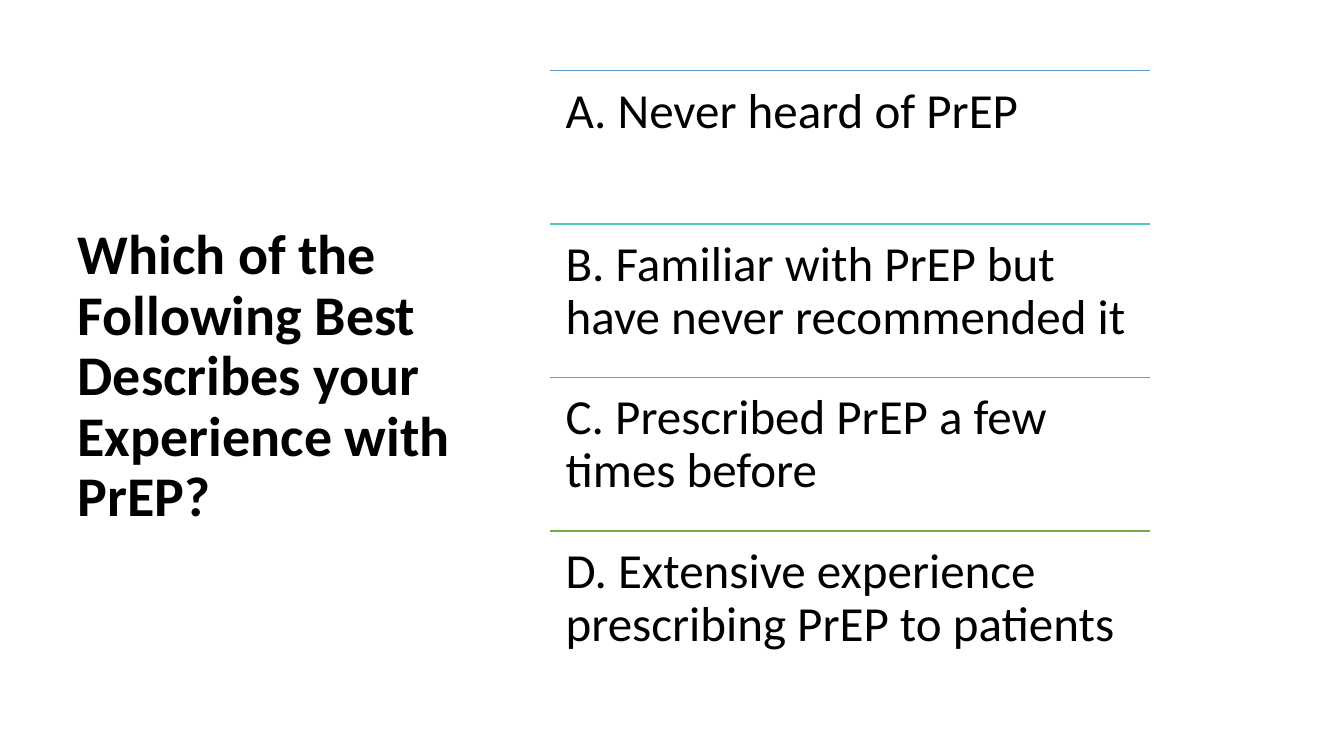
from lxml.etree import SubElement
from pptx import Presentation
from pptx.dml.color import RGBColor
from pptx.enum.shapes import MSO_CONNECTOR
from pptx.enum.text import MSO_ANCHOR, MSO_AUTO_SIZE, PP_ALIGN
from pptx.oxml.ns import qn
from pptx.util import Inches, Pt

COLORS = {
    "text": "000000",
    "blue": "5B9BD5",
    "teal": "52CAB8",
    "green": "49BF64",
    "olive": "70AD47",
}
FONT = "Calibri"
QUESTION = ["Which of the Following Best", "Describes your Experience with PrEP?"]
ANSWERS = [
    ("A. Never heard of PrEP", "blue"),
    ("B. Familiar with PrEP but have never recommended it", "teal"),
    ("C. Prescribed PrEP a few times before", "green"),
    ("D. Extensive experience prescribing PrEP to patients", "olive"),
]


def rgb(name):
    """Return the named palette colour."""
    return RGBColor.from_string(COLORS[name])


def format_paragraph(p, size, bold=False):
    """Apply the slide's shared text style to a paragraph."""
    p.alignment = PP_ALIGN.LEFT
    p.line_spacing = 0.9
    p.font.name = FONT
    p.font.size = Pt(size)
    p.font.bold = bold
    p.font.color.rgb = rgb("text")


def add_question(slide, left, top, width, height):
    """Place the question in the title placeholder."""
    sp = slide.shapes.title
    sp.left, sp.top = Inches(left), Inches(top)
    sp.width, sp.height = Inches(width), Inches(height)
    tf = sp.text_frame
    tf.word_wrap = True
    tf.auto_size = MSO_AUTO_SIZE.NONE
    tf.vertical_anchor = MSO_ANCHOR.MIDDLE
    p = tf.paragraphs[0]
    first, second = QUESTION
    p.add_run().text = first
    p.add_line_break()
    p.add_run().text = second
    format_paragraph(p, 40, bold=True)


def add_answer(slide, text, color, left, top, width, height):
    """Draw one answer under its coloured rule."""
    x, y, w, h = (Inches(v) for v in (left, top, width, height))
    line = slide.shapes.add_connector(MSO_CONNECTOR.STRAIGHT, x, y, x + w, y)
    line.line.color.rgb = rgb(color)
    line.line.width = Pt(1)
    SubElement(line._element.spPr, qn("a:effectLst"))

    tf = slide.shapes.add_textbox(x, y, w, h).text_frame
    tf.word_wrap = True
    tf.margin_left = tf.margin_right = Inches(0.15)
    tf.margin_top = tf.margin_bottom = Inches(0.15)
    p = tf.paragraphs[0]
    p.text = text
    format_paragraph(p, 35)


def add_answers(slide, left, top, width, height):
    """Stack the answers in equal rows."""
    row = height / len(ANSWERS)
    for i, (text, color) in enumerate(ANSWERS):
        add_answer(slide, text, color, left, top + i * row, width, row)


def main():
    """Build and save the slide."""
    prs = Presentation()
    prs.slide_width, prs.slide_height = Inches(13.33), Inches(7.5)
    slide = prs.slides.add_slide(prs.slide_layouts[5])
    add_question(slide, 0.67, 0.7, 4.11, 6.09)
    add_answers(slide, 5.46, 0.7, 5.95, 6.09)
    prs.save("out.pptx")


if __name__ == "__main__":
    main()
